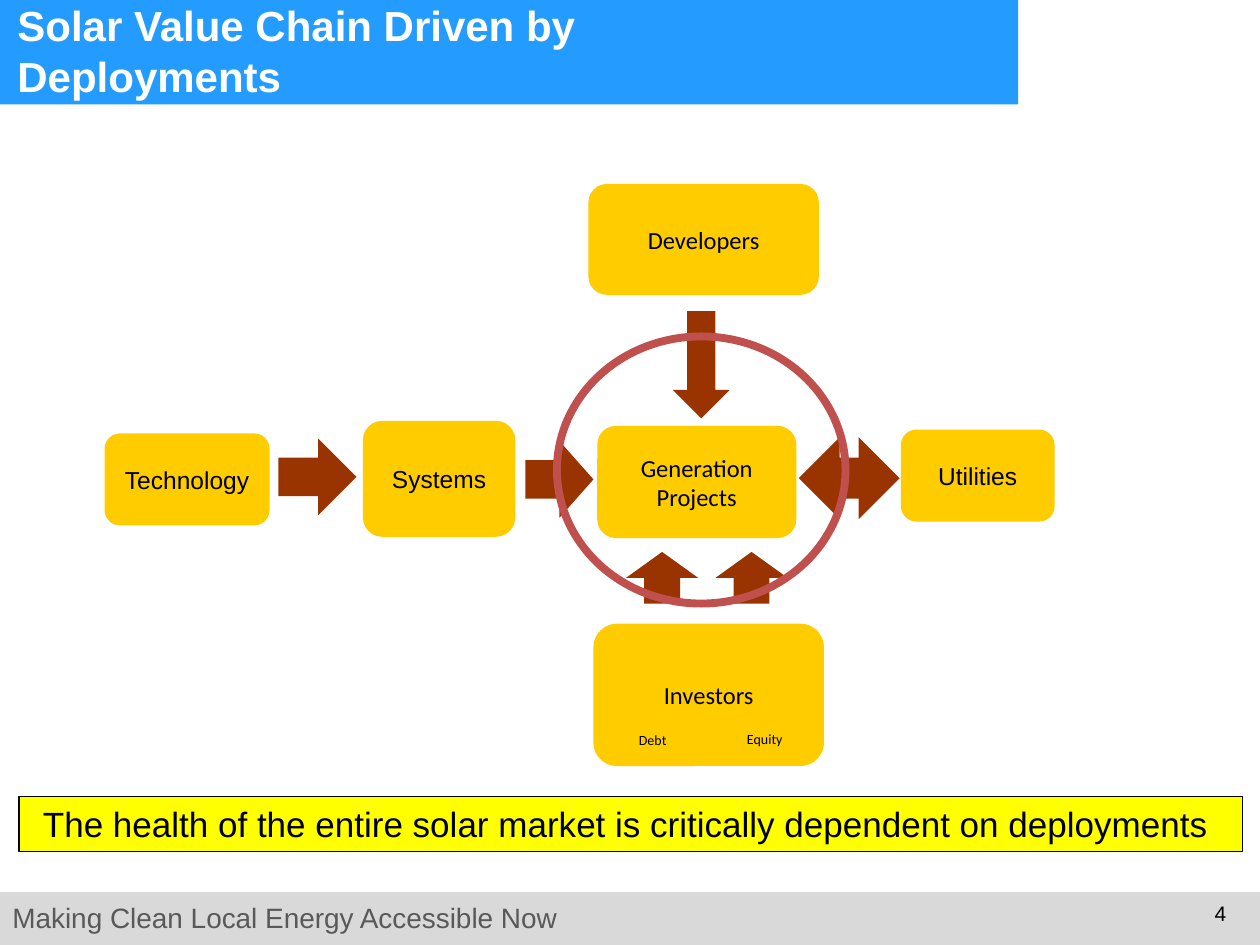
from pptx import Presentation
from pptx.dml.color import RGBColor
from pptx.enum.shapes import MSO_SHAPE
from pptx.enum.text import MSO_ANCHOR, PP_ALIGN
from pptx.util import Inches, Pt

RECTANGLE = MSO_SHAPE.RECTANGLE
ROUNDED = MSO_SHAPE.FLOWCHART_ALTERNATE_PROCESS
RIGHT_ARROW = MSO_SHAPE.RIGHT_ARROW
DOUBLE_ARROW = MSO_SHAPE.LEFT_RIGHT_ARROW
BEVEL = MSO_SHAPE.BEVEL
ELLIPSE = MSO_SHAPE.OVAL
TOP, MIDDLE = MSO_ANCHOR.TOP, MSO_ANCHOR.MIDDLE
LEFT, CENTER, RIGHT = PP_ALIGN.LEFT, PP_ALIGN.CENTER, PP_ALIGN.RIGHT

BLACK, WHITE = "000000", "FFFFFF"
BLUE, GRAY, DARK_GRAY = "249CFF", "D9D9D9", "595959"
GOLD, BROWN, YELLOW, RED = "FFCC00", "993300", "FFFF00", "C0504D"


def color(hex_code):
    return RGBColor.from_string(hex_code)


class SlideBuilder:
    """Holds the text style and the current page."""

    def __init__(self, page, font="Arial"):
        self.page = page
        self.font = font

    def shape(self, kind, place, fill=None, line=None, line_width=0.75, rotation=0):
        shape = self.page.shapes.add_shape(kind, *map(Inches, place))
        shape.shadow.inherit = False
        shape.rotation = rotation
        if fill:
            shape.fill.solid()
            shape.fill.fore_color.rgb = color(fill)
        else:
            shape.fill.background()
        if line:
            shape.line.color.rgb = color(line)
            shape.line.width = Pt(line_width)
        else:
            shape.line.fill.background()
        return shape

    def add_text(self, shape, text, size, ink=BLACK, font=None, bold=False,
                 align=CENTER, anchor=MIDDLE, wrap=True):
        frame = shape.text_frame
        frame.word_wrap = wrap
        frame.vertical_anchor = anchor
        para = frame.paragraphs[0]
        para.alignment = align
        span = para.add_run()
        span.text = text
        span.font.name = font or self.font
        span.font.size = Pt(size)
        span.font.bold = bold
        span.font.color.rgb = color(ink)

    def label(self, place, text, size, **style):
        box = self.page.shapes.add_textbox(*map(Inches, place))
        self.add_text(box, text, size, **style)

    def stage(self, place, text, font=None):
        self.add_text(self.shape(ROUNDED, place, GOLD), text, 14, font=font)

    def arrow(self, place, rotation=0, kind=RIGHT_ARROW):
        self.shape(kind, place, BROWN, rotation=rotation)


def main():
    deck = Presentation()
    deck.slide_width, deck.slide_height = Inches(10), Inches(7.5)
    builder = SlideBuilder(deck.slides.add_slide(deck.slide_layouts[6]))

    # Footer and title bar
    builder.shape(RECTANGLE, (0, 7.08, 10, 0.42), GRAY)
    builder.label((0, 7.1, 5.17, 0.37), "Making Clean Local Energy Accessible Now",
                  16, ink=DARK_GRAY, align=LEFT, anchor=TOP)
    builder.shape(RECTANGLE, (0, 0, 8.08, 0.83), BLUE)
    builder.label((9.33, 7.1, 0.5, 0.4), "4", 12, align=RIGHT, anchor=TOP)
    builder.label((0.04, 0.08, 6.04, 0.64), "Solar Value Chain Driven by Deployments",
                  24, ink=WHITE, bold=True, align=LEFT, wrap=False)

    # Stages of the value chain
    builder.stage((4.71, 4.95, 1.83, 1.13), "Investors", "Calibri")
    builder.stage((0.83, 3.44, 1.31, 0.73), "Technology")
    builder.stage((7.15, 3.41, 1.22, 0.73), "Utilities")
    builder.stage((2.88, 3.34, 1.21, 0.92), "Systems")
    builder.stage((4.74, 3.38, 1.58, 0.89), "Generation Projects", "Calibri")
    builder.stage((4.67, 1.46, 1.83, 0.88), "Developers", "Calibri")

    # Arrows along the chain, then down from developers
    builder.arrow((2.21, 3.48, 0.62, 0.61))
    builder.arrow((4.17, 3.5, 0.54, 0.61))
    builder.arrow((6.34, 3.47, 0.8, 0.65), kind=DOUBLE_ARROW)
    builder.arrow((5.14, 2.67, 0.85, 0.45), rotation=90)

    # Kinds of investment, each with an arrow up to the projects
    for text, place, arrow_left in (("Debt", (4.74, 5.58, 0.88, 0.59), 5.05),
                                    ("Equity", (5.61, 5.57, 0.92, 0.59), 5.76)):
        builder.add_text(builder.shape(BEVEL, place), text, 8, font="Calibri")
        builder.arrow((arrow_left, 4.3, 0.41, 0.57), rotation=270)

    # Key message and highlight ring
    message = builder.shape(RECTANGLE, (0.15, 6.32, 9.71, 0.44), YELLOW, BLACK)
    builder.add_text(message, "The health of the entire solar market is critically "
                     "dependent on deployments ", 20, anchor=TOP)
    builder.shape(ELLIPSE, (4.42, 2.67, 2.29, 2.12), line=RED, line_width=4.5)

    deck.save("out.pptx")


if __name__ == "__main__":
    main()
